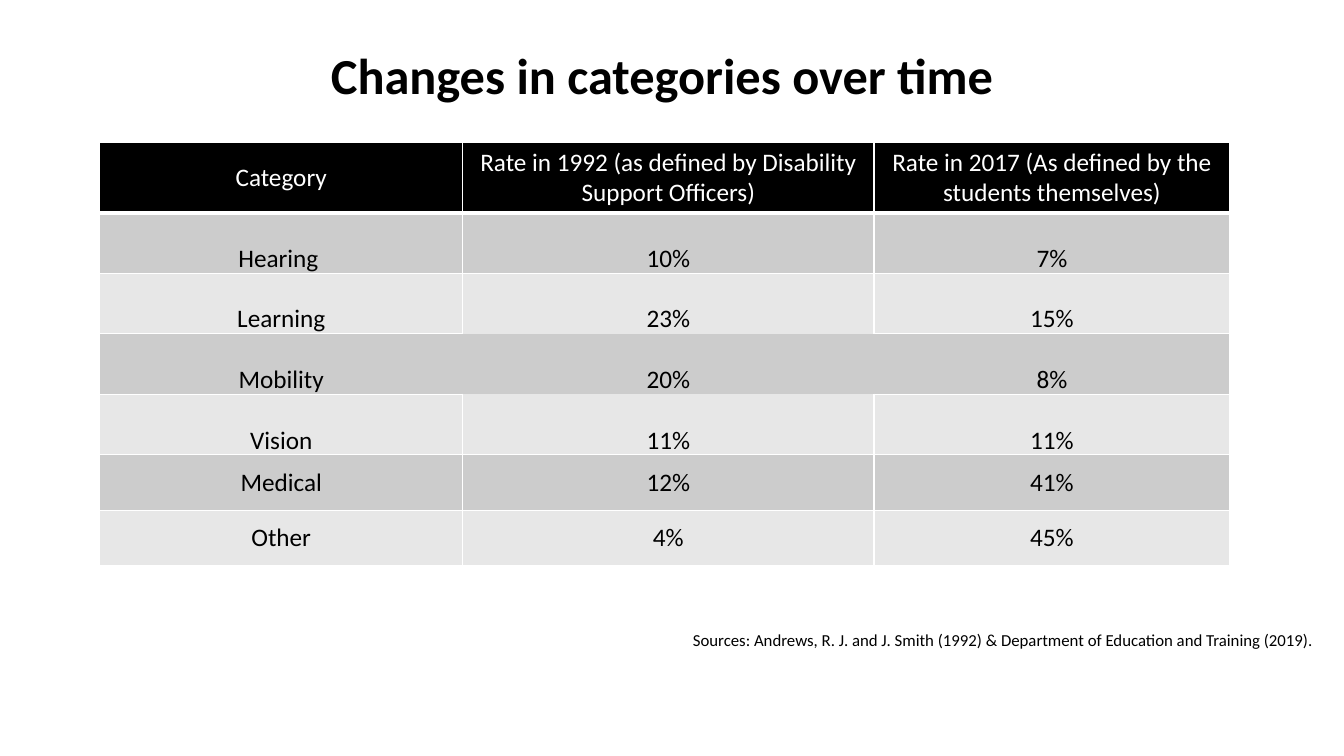
from lxml import etree
from pptx import Presentation
from pptx.dml.color import RGBColor
from pptx.enum.text import MSO_ANCHOR, PP_ALIGN
from pptx.oxml.ns import qn
from pptx.util import Pt

CENTER, RIGHT = PP_ALIGN.CENTER, PP_ALIGN.RIGHT
MIDDLE = MSO_ANCHOR.MIDDLE

TITLE = "Changes in categories over time"
SOURCES = ("Sources: Andrews, R. J. and J. Smith (1992) & "
           "Department of Education and Training (2019).")
RATES = [
    ("Category", "Rate in 1992 (as defined by Disability Support Officers)",
     "Rate in 2017 (As defined by the students themselves)"),
    ("Hearing ", "10%", "7%"),
    ("Learning", "23%", "15%"),
    ("Mobility", "20%", "8%"),
    ("Vision", "11%", "11%"),
    ("Medical", "12%", "41%"),
    ("Other", "4%", "45%"),
]
DOUBLE_SPACED_ROWS = range(1, 5)
BORDERLESS_CELL = (3, 1)

FONT = "Calibri"
BLACK = RGBColor(0x00, 0x00, 0x00)
WHITE = RGBColor(0xFF, 0xFF, 0xFF)
DARK_BAND = RGBColor(0xCC, 0xCC, 0xCC)
LIGHT_BAND = RGBColor(0xE7, 0xE7, 0xE7)

TABLE_LEFT, TABLE_TOP = 71.3, 101.5
COLUMN_WIDTHS = [259.2, 293.8, 254.2]
HEADER_HEIGHT, ROW_HEIGHT = 47.5, 39.7
SIDES = {"lnL": (0, -1), "lnR": (0, 1), "lnT": (-1, 0), "lnB": (1, 0)}


def style(paragraph, size, color, align, bold=False):
    paragraph.alignment = align
    font = paragraph.font
    font.name, font.size, font.bold = FONT, Pt(size), bold
    font.color.rgb = color


def add_text(slide, text, box, size, align, bold=False):
    frame = slide.shapes.add_textbox(*(Pt(v) for v in box)).text_frame
    frame.word_wrap = True
    frame.text = text
    style(frame.paragraphs[0], size, BLACK, align, bold)


def add_borders(cell, row, column):
    properties = cell._tc.get_or_add_tcPr()
    for index, (side, (down, across)) in enumerate(SIDES.items()):
        neighbour = (row + down, column + across)
        width = 3 if row == 0 and side == "lnB" else 1
        line = etree.Element(qn("a:" + side), w=str(Pt(width)))
        if BORDERLESS_CELL in ((row, column), neighbour):
            etree.SubElement(line, qn("a:noFill"))
        else:
            fill = etree.SubElement(line, qn("a:solidFill"))
            etree.SubElement(fill, qn("a:srgbClr"), val=str(WHITE))
        properties.insert(index, line)


def fill_cell(cell, text, row, column):
    header = row == 0
    cell.text = text
    cell.vertical_anchor = MIDDLE
    paragraph = cell.text_frame.paragraphs[0]
    style(paragraph, 18, WHITE if header else BLACK, CENTER)
    if row in DOUBLE_SPACED_ROWS:
        paragraph.line_spacing = 2.0
    if not header:
        cell.margin_left = cell.margin_right = Pt(0)
        cell.margin_top = cell.margin_bottom = Pt(0)
    cell.fill.solid()
    band = DARK_BAND if row % 2 else LIGHT_BAND
    cell.fill.fore_color.rgb = BLACK if header else band
    add_borders(cell, row, column)


def add_rates(slide):
    heights = [HEADER_HEIGHT] + [ROW_HEIGHT] * (len(RATES) - 1)
    table = slide.shapes.add_table(
        len(RATES), len(COLUMN_WIDTHS), Pt(TABLE_LEFT), Pt(TABLE_TOP),
        Pt(sum(COLUMN_WIDTHS)), Pt(sum(heights))).table
    for column, width in zip(table.columns, COLUMN_WIDTHS):
        column.width = Pt(width)
    for row, (height, texts) in enumerate(zip(heights, RATES)):
        table.rows[row].height = Pt(height)
        for column, text in enumerate(texts):
            fill_cell(table.cell(row, column), text, row, column)


def main():
    deck = Presentation()
    deck.slide_width, deck.slide_height = Pt(960), Pt(540)
    slide = deck.slides.add_slide(deck.slide_layouts[6])
    add_text(slide, TITLE, (108, 28, 730, 51), 36, CENTER, bold=True)
    add_text(slide, SOURCES, (473, 446.4, 472.3, 21.8), 12, RIGHT)
    add_rates(slide)
    deck.save("out.pptx")


if __name__ == "__main__":
    main()
